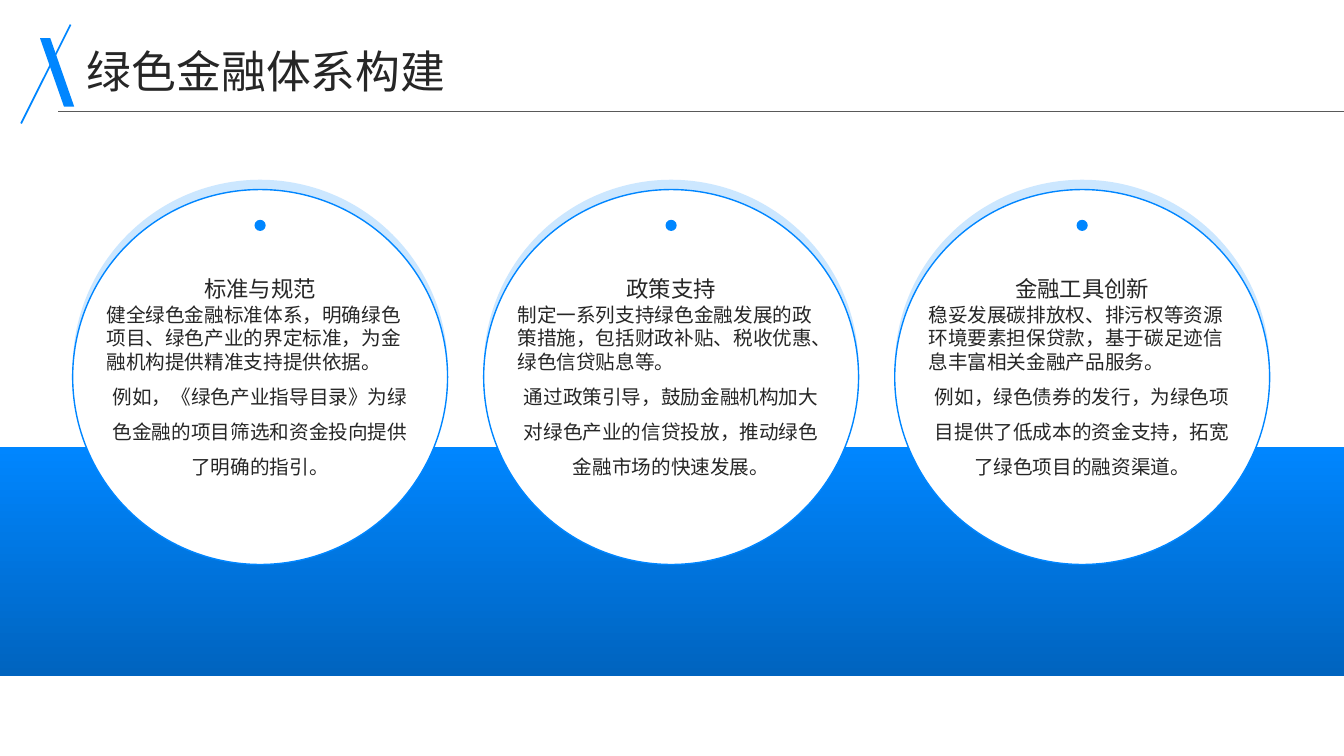
import dataclasses

import pptx
import pptx.dml.color
import pptx.enum.shapes
import pptx.enum.text
import pptx.oxml.ns
import pptx.util
from lxml import etree

Pt = pptx.util.Pt
RGBColor = pptx.dml.color.RGBColor
Shape = pptx.enum.shapes.MSO_SHAPE
Align = pptx.enum.text.PP_ALIGN
Anchor = pptx.enum.text.MSO_ANCHOR

BLUE = RGBColor(0x00, 0x86, 0xFF)
DEEP = RGBColor(0x00, 0x64, 0xBF)
PALE = RGBColor(0xCC, 0xE7, 0xFF)
WHITE = RGBColor(0xFF, 0xFF, 0xFF)
INK = RGBColor(0x26, 0x26, 0x26)
GREY = RGBColor(0x59, 0x59, 0x59)
FONT = "Noto Sans CJK SC"

FIRST = 185.8  # centre of the first circle
PITCH = 293.6
SIZE = 267.8
DOT = 8
WIDTH = 219.6


@dataclasses.dataclass(frozen=True)
class Card:
    head: str
    goal: str
    detail: str


@dataclasses.dataclass(frozen=True)
class Line:
    text: str
    size: float
    align: Align
    space: float


CARDS = [
    Card("标准与规范",
         "健全绿色金融标准体系，明确绿色项目、绿色产业的界定标准，为金融机构提供精准支持提供依据。",
         "例如，《绿色产业指导目录》为绿色金融的项目筛选和资金投向提供了明确的指引。"),
    Card("政策支持",
         "制定一系列支持绿色金融发展的政策措施，包括财政补贴、税收优惠、绿色信贷贴息等。",
         "通过政策引导，鼓励金融机构加大对绿色产业的信贷投放，推动绿色金融市场的快速发展。"),
    Card("金融工具创新",
         "稳妥发展碳排放权、排污权等资源环境要素担保贷款，基于碳足迹信息丰富相关金融产品服务。",
         "例如，绿色债券的发行，为绿色项目提供了低成本的资金支持，拓宽了绿色项目的融资渠道。"),
]


def add_form(slide, kind: Shape, left: float, top: float, width: float,
             height: float, fill: RGBColor):
    form = slide.shapes.add_shape(kind, Pt(left), Pt(top), Pt(width), Pt(height))
    form.shadow.inherit = False
    form.fill.solid()
    form.fill.fore_color.rgb = fill
    form.line.fill.background()
    return form


def add_disc(slide, mid: float, top: float, size: float, fill: RGBColor):
    return add_form(slide, Shape.OVAL, mid - size / 2, top, size, size, fill)


def add_text(slide, left: float, top: float, width: float, height: float,
             lines: list[Line], anchor: Anchor) -> None:
    box = slide.shapes.add_textbox(Pt(left), Pt(top), Pt(width), Pt(height))
    frame = box.text_frame
    frame.word_wrap = True
    frame.vertical_anchor = anchor
    frame.margin_left = frame.margin_right = Pt(0)
    frame.margin_top = frame.margin_bottom = Pt(0)
    for i, line in enumerate(lines):
        para = frame.add_paragraph() if i else frame.paragraphs[0]
        para.alignment = line.align
        para.line_spacing = line.space
        run = para.add_run()
        run.text = line.text
        run.font.size = Pt(line.size)
        run.font.name = FONT
        run.font.color.rgb = INK
        east = etree.SubElement(run.font._element, pptx.oxml.ns.qn("a:ea"))
        east.set("typeface", FONT)


def add_line(slide, start: tuple[float, float], end: tuple[float, float],
             color: RGBColor, width: float) -> None:
    line = slide.shapes.add_connector(
        pptx.enum.shapes.MSO_CONNECTOR.STRAIGHT,
        *(Pt(value) for value in (*start, *end)))
    line.line.color.rgb = color
    line.line.width = Pt(width)
    etree.SubElement(line._element.spPr, pptx.oxml.ns.qn("a:effectLst"))


def add_band(slide) -> None:
    band = add_form(slide, Shape.ROUNDED_RECTANGLE, -36.6, 319, 1033.2, 163.6, BLUE)
    band.adjustments[0] = 0.04
    band.fill.gradient()
    band.fill.gradient_angle = 270
    for stop, color in zip(band.fill.gradient_stops, (BLUE, DEEP)):
        stop.color.rgb = color


def add_card(slide, card: Card, mid: float) -> None:
    disc = add_disc(slide, mid, 135.4, SIZE, WHITE)
    disc.line.color.rgb = BLUE
    disc.line.width = Pt(1)
    left = mid - WIDTH / 2
    body = [Line(card.goal, 14, Align.LEFT, 1.0),
            Line(card.detail, 14, Align.CENTER, 1.5)]
    add_text(slide, left, 216, WIDTH, 167, body, Anchor.TOP)
    head = [Line(card.head, 16, Align.CENTER, 1.1)]
    add_text(slide, left, 193, WIDTH, 23.8, head, Anchor.MIDDLE)
    add_disc(slide, mid, 157, DOT, BLUE)


def add_title(slide) -> None:
    title = [Line("绿色金融体系构建", 32, Align.LEFT, 1.1)]
    add_text(slide, 62, 31.7, 845, 33.8, title, Anchor.MIDDLE)
    slash = add_form(slide, Shape.PARALLELOGRAM, 28.6, 27.3, 24.4, 48.8, BLUE)
    slash.adjustments[0] = 0.7
    slash._element.spPr.xfrm.set("flipH", "1")
    add_line(slide, (50.4, 17.6), (15.1, 88.2), BLUE, 1.25)
    add_line(slide, (41.8, 79.6), (960, 79.6), GREY, 0.75)


def main() -> None:
    deck = pptx.Presentation()
    deck.slide_width, deck.slide_height = Pt(960), Pt(540)
    slide = deck.slides.add_slide(deck.slide_layouts[6])
    mids = [FIRST + i * PITCH for i in range(len(CARDS))]
    add_band(slide)
    for mid in mids:
        add_disc(slide, mid, 128.4, SIZE, PALE)
    for card, mid in zip(CARDS, mids):
        add_card(slide, card, mid)
    add_title(slide)
    deck.save("out.pptx")


if __name__ == "__main__":
    main()
